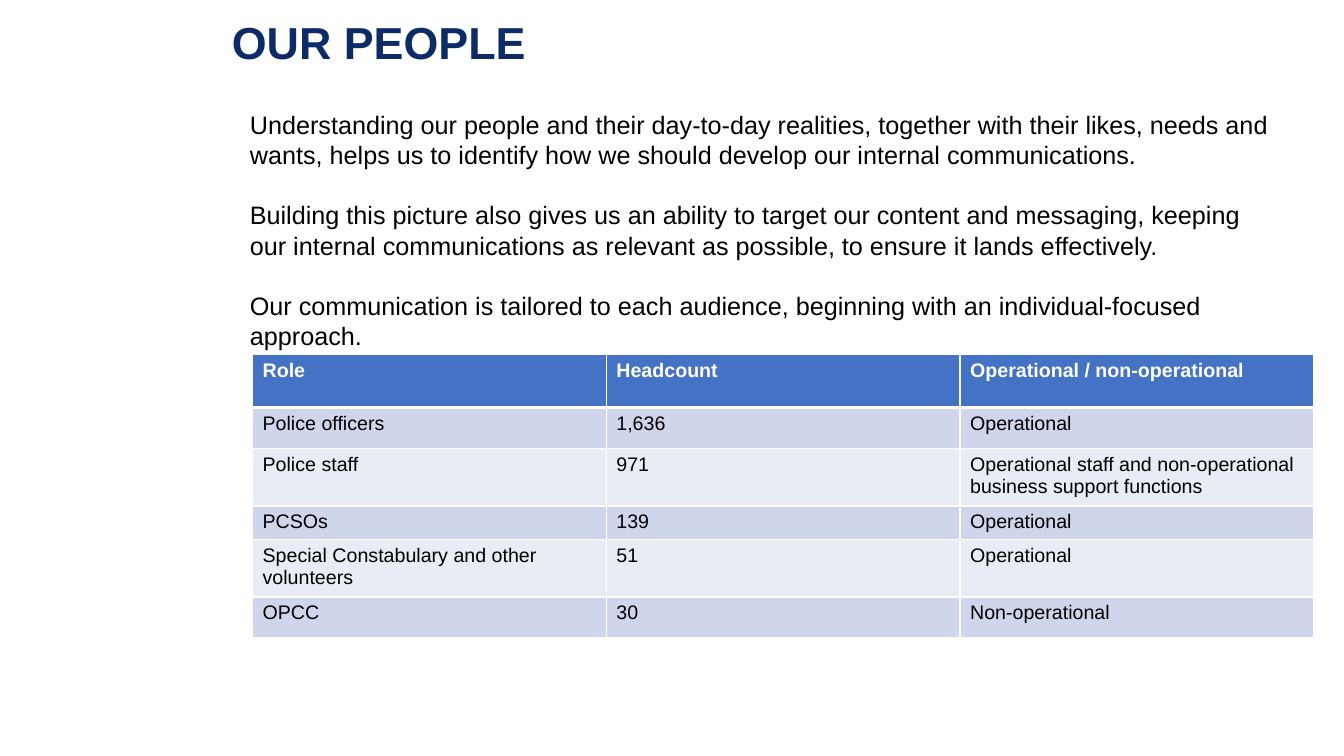
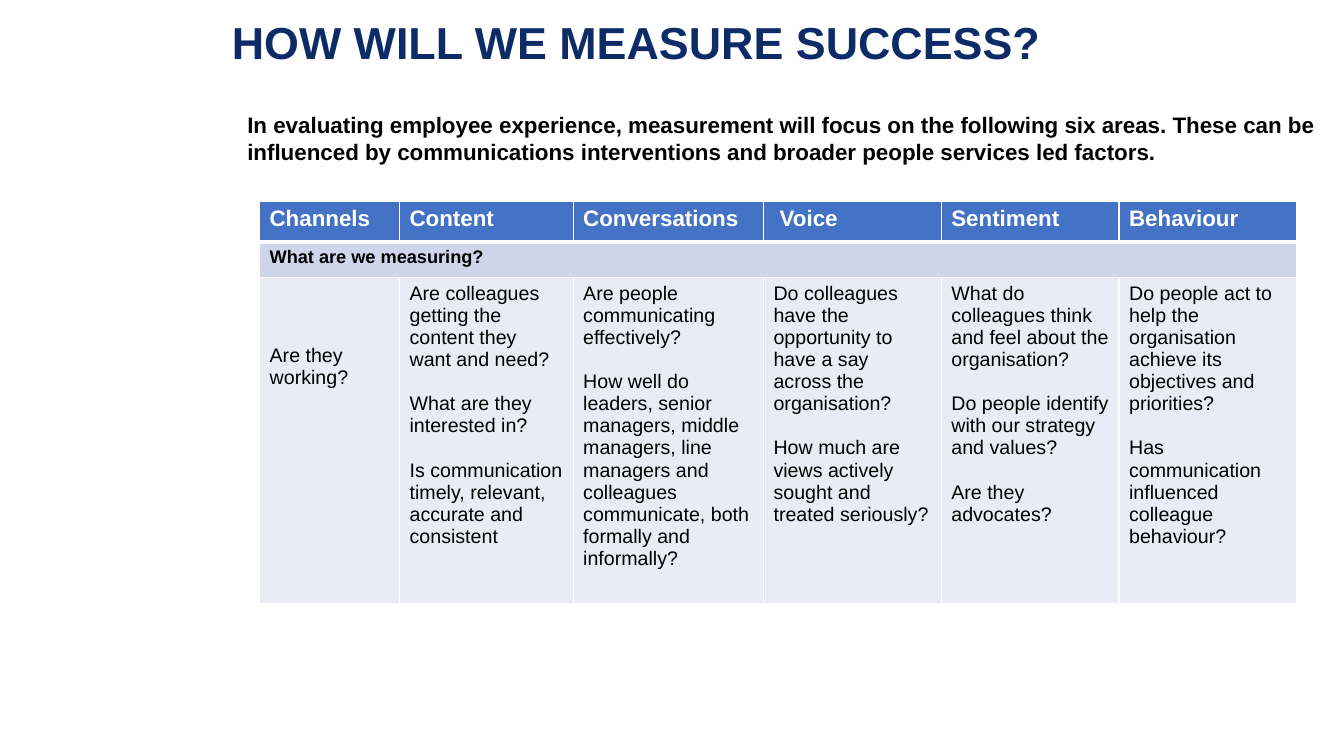
from pptx import Presentation
from pptx.dml.color import RGBColor
from pptx.enum.text import MSO_ANCHOR, MSO_AUTO_SIZE, PP_ALIGN
from pptx.oxml import parse_xml
from pptx.oxml.ns import nsdecls
from pptx.util import Pt

FONT = "Arial"
NAVY = "0D2B67"
BLUE = "4472C4"
BANDS = ("CFD5EA", "E9EBF5")
BLACK = "000000"
WHITE = "FFFFFF"
TITLE_ONLY = 5


def color(value):
    return RGBColor.from_string(value)


class Slides:
    """Holds the shared style, the deck and the current page."""

    def __init__(self):
        self.deck = Presentation()
        self.deck.slide_width = Pt(960)
        self.deck.slide_height = Pt(540)
        self.page = None

    def add_page(self, title):
        self.page = self.deck.slides.add_slide(self.deck.slide_layouts[TITLE_ONLY])
        box = self.page.shapes.title
        box.left, box.top, box.width, box.height = Pt(158.4), Pt(9), Pt(794), Pt(46)
        frame = box.text_frame
        frame.auto_size = MSO_AUTO_SIZE.NONE
        frame.vertical_anchor = MSO_ANCHOR.MIDDLE
        self.fill_text(frame, [title], 32, NAVY, bold=True)
        frame.paragraphs[0].line_spacing = 0.9

    def fill_text(self, frame, texts, size, ink=BLACK, bold=False, gap=0):
        """Fill a frame with one paragraph per text, gap points apart."""
        frame.word_wrap = True
        for index, text in enumerate(texts):
            para = frame.add_paragraph() if index else frame.paragraphs[0]
            para.text = text
            para.alignment = PP_ALIGN.LEFT
            if index:
                para.space_before = Pt(gap)
            for span in para.runs:
                span.font.name = FONT
                span.font.size = Pt(size)
                span.font.bold = bold
                span.font.color.rgb = color(ink)

    def add_text(self, left, top, width, height, texts, size, bold=False, gap=0):
        box = self.page.shapes.add_textbox(Pt(left), Pt(top), Pt(width), Pt(height))
        self.fill_text(box.text_frame, texts, size, bold=bold, gap=gap)

    def add_table(self, left, top, widths, heights, rows, header_size):
        """Draw a header row and banded body rows; a cell is a text or a list."""
        table = self.page.shapes.add_table(
            len(heights), len(widths), Pt(left), Pt(top),
            Pt(sum(widths)), Pt(sum(heights))).table
        for column, width in zip(table.columns, widths):
            column.width = Pt(width)
        for number, (row, height) in enumerate(zip(rows, heights)):
            table.rows[number].height = Pt(height)
            header = number == 0
            for index in range(len(widths)):
                cell = table.cell(number, index)
                self.add_borders(cell, 3 if header else 1)
                cell.fill.solid()
                cell.fill.fore_color.rgb = color(BLUE if header else BANDS[(number - 1) % 2])
            for index, content in enumerate(row):
                texts = [content] if isinstance(content, str) else content
                self.fill_text(table.cell(number, index).text_frame, texts,
                               header_size if header else 14,
                               WHITE if header else BLACK, header, gap=15.8)
        return table

    def add_borders(self, cell, bottom):
        properties = cell._tc.get_or_add_tcPr()
        for side, width in (("L", 1), ("R", 1), ("T", 1), ("B", bottom)):
            properties.append(parse_xml(
                f'<a:ln{side} {nsdecls("a")} w="{Pt(width)}"><a:solidFill>'
                f'<a:srgbClr val="{WHITE}"/></a:solidFill></a:ln{side}>'))


def add_people(slides):
    slides.add_page("OUR PEOPLE")
    slides.add_text(171.4, 74.2, 751, 181.4, [
        "Understanding our people and their day-to-day realities, together with their "
        "likes, needs and wants, helps us to identify how we should develop our "
        "internal communications.",
        "Building this picture also gives us an ability to target our content and "
        "messaging, keeping our internal communications as relevant as possible, to "
        "ensure it lands effectively.",
        "Our communication is tailored to each audience, beginning with an "
        "individual-focused approach.",
    ], 18, gap=21.6)

    # Headcount by role
    slides.add_table(180.4, 253, [252.7] * 3, [38, 29.5, 41, 24, 41, 29], [
        ["Role", "Headcount", "Operational / non-operational"],
        ["Police officers", "1,636", "Operational"],
        ["Police staff", "971",
         "Operational staff and non-operational business support functions"],
        ["PCSOs", "139", "Operational"],
        ["Special Constabulary and other volunteers", "51", "Operational"],
        ["OPCC", "30", "Non-operational"],
    ], 14)


def add_success(slides):
    slides.add_page("HOW WILL WE MEASURE SUCCESS?")
    slides.add_text(169.6, 76, 790.4, 46, [
        "In evaluating employee experience, measurement will focus on the following "
        "six areas. These can be influenced by communications interventions and "
        "broader people services led factors.",
    ], 16, bold=True)

    # Six areas of measurement
    table = slides.add_table(185.4, 144, [100, 124, 136, 127, 127, 127], [29, 25.5, 232.5], [
        ["Channels", "Content", "Conversations", "Voice", "Sentiment", "Behaviour"],
        [],
        ["Are they working?",
         ["Are colleagues getting the content they want and need?",
          "What are they interested in?",
          "Is communication timely, relevant, accurate and consistent"],
         ["Are people communicating effectively?",
          "How well do leaders, senior managers, middle managers, line managers and "
          "colleagues communicate, both formally and informally?"],
         ["Do colleagues have the opportunity to have a say across the organisation?",
          "How much are views actively sought and treated seriously?"],
         ["What do colleagues think and feel about the organisation?",
          "Do people identify with our strategy and values?",
          "Are they advocates?"],
         ["Do people act to help the organisation achieve its objectives and priorities?",
          "Has communication influenced colleague behaviour?"]],
    ], 16)

    # Question band across all columns
    band = table.cell(1, 0)
    band.merge(table.cell(1, 5))
    slides.fill_text(band.text_frame, ["What are we measuring?"], 13, bold=True)

    # Cells with their own insets
    table.cell(0, 3).margin_left = Pt(11.6)
    table.cell(2, 0).margin_top = Pt(47.4)


def main():
    slides = Slides()
    add_people(slides)
    add_success(slides)
    slides.deck.save("out.pptx")


if __name__ == "__main__":
    main()
